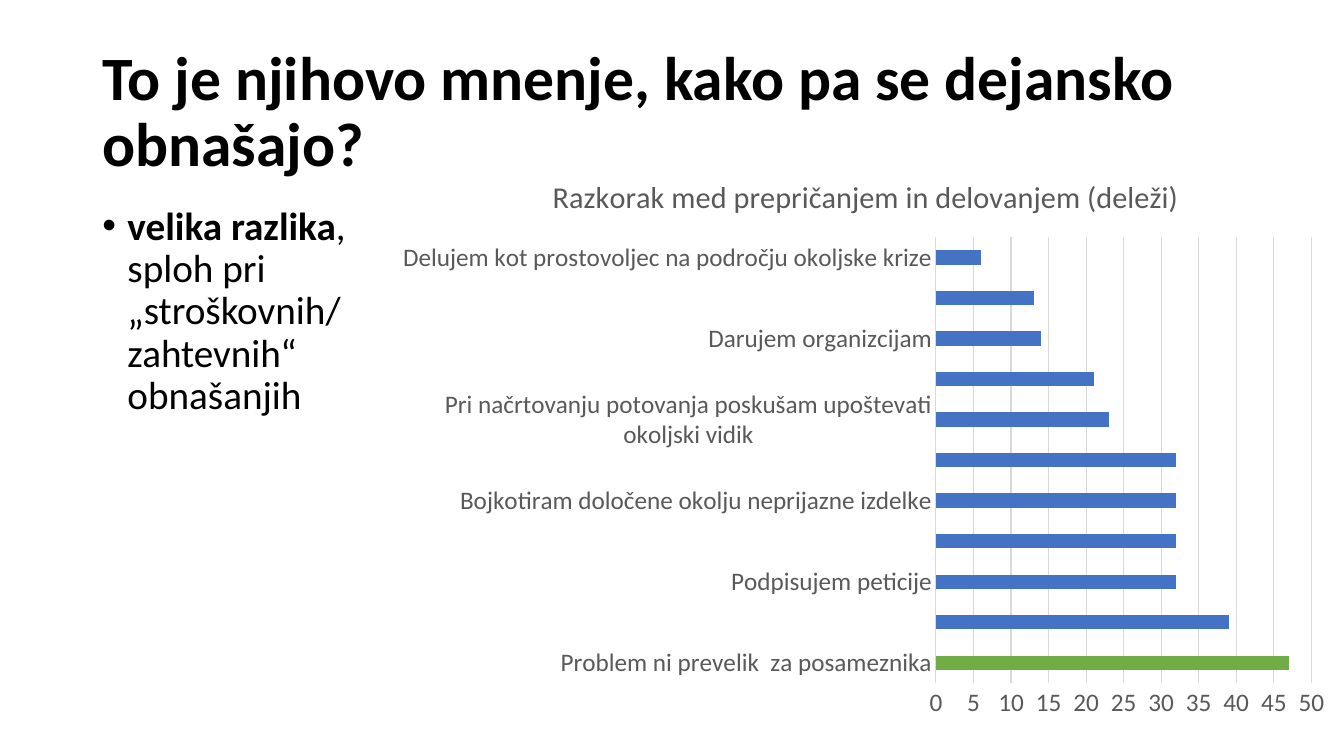
from dataclasses import dataclass

from lxml.etree import SubElement
from pptx import Presentation
from pptx.chart.data import CategoryChartData
from pptx.dml.color import RGBColor
from pptx.enum.chart import XL_CHART_TYPE, XL_TICK_MARK
from pptx.enum.text import MSO_ANCHOR, MSO_AUTO_SIZE, PP_ALIGN
from pptx.oxml.ns import qn
from pptx.util import Pt

COLORS = {"text": "000000", "label": "595959", "grid": "D9D9D9",
          "bar": "4472C4", "highlight": "70AD47"}
FONT = "Calibri"


@dataclass
class Box:
    left: float
    top: float
    width: float
    height: float

    def points(self) -> tuple:
        return Pt(self.left), Pt(self.top), Pt(self.width), Pt(self.height)


@dataclass
class Behaviour:
    share: int
    label: str = ""
    color: str = "bar"


# Every second bar is labelled, from the bottom up
BEHAVIOURS = [
    Behaviour(47, "Problem ni prevelik  za posameznika", "highlight"),
    Behaviour(39),
    Behaviour(32, "Podpisujem peticije"),
    Behaviour(32),
    Behaviour(32, "Bojkotiram določene okolju neprijazne izdelke"),
    Behaviour(32),
    Behaviour(23, "Pri načrtovanju potovanja poskušam upoštevati okoljski vidik"),
    Behaviour(21),
    Behaviour(14, "Darujem organizcijam"),
    Behaviour(13),
    Behaviour(6, "Delujem kot prostovoljec na področju okoljske krize"),
]


def rgb(name: str) -> RGBColor:
    return RGBColor.from_string(COLORS[name])


def set_font(font, size: float, color: str = "text", bold: bool = False) -> None:
    for key, value in {"name": FONT, "size": Pt(size), "bold": bold}.items():
        setattr(font, key, value)
    font.color.rgb = rgb(color)


def set_frame(tf, anchor) -> None:
    settings = {"word_wrap": True, "auto_size": MSO_AUTO_SIZE.NONE,
                "vertical_anchor": anchor,
                "margin_left": Pt(7.2), "margin_right": Pt(7.2),
                "margin_top": Pt(3.6), "margin_bottom": Pt(3.6)}
    for key, value in settings.items():
        setattr(tf, key, value)


def set_layout(parent, index: int, **fractions: float) -> None:
    """Place a chart part by fractions of the chart area."""
    for old in parent.findall(qn("c:layout")):
        parent.remove(old)
    layout = parent.makeelement(qn("c:layout"))
    parent.insert(index, layout)
    manual = SubElement(layout, qn("c:manualLayout"))
    if "w" in fractions:
        SubElement(manual, qn("c:layoutTarget")).set("val", "inner")
    for axis in "xy":
        SubElement(manual, qn(f"c:{axis}Mode")).set("val", "edge")
    for key, value in fractions.items():
        SubElement(manual, qn(f"c:{key}")).set("val", str(value))


def add_title(s, box: Box, text: str) -> None:
    sp = s.shapes.title
    sp.left, sp.top, sp.width, sp.height = box.points()
    set_frame(sp.text_frame, MSO_ANCHOR.MIDDLE)
    p = sp.text_frame.paragraphs[0]
    p.alignment, p.line_spacing = PP_ALIGN.LEFT, 0.9
    r = p.add_run()
    r.text = text
    set_font(r.font, 44, bold=True)


def add_bullet(s, box: Box) -> None:
    tf = s.shapes.add_textbox(*box.points()).text_frame
    set_frame(tf, MSO_ANCHOR.TOP)
    p = tf.paragraphs[0]
    p.line_spacing = 0.9
    pPr = p._p.get_or_add_pPr()
    pPr.set("marL", str(Pt(18)))
    pPr.set("indent", str(-Pt(18)))
    SubElement(pPr, qn("a:buFont")).set("typeface", "Arial")
    SubElement(pPr, qn("a:buChar")).set("char", "•")
    for text, bold, break_before in [("velika razlika", True, False),
                                     (", sploh pri „stroškovnih/", False, False),
                                     ("zahtevnih“ obnašanjih", False, True)]:
        if break_before:
            p.add_line_break()
        r = p.add_run()
        r.text = text
        set_font(r.font, 28, bold=bold)


def add_gap_chart(s, box: Box) -> None:
    data = CategoryChartData()
    data.categories = [b.label for b in BEHAVIOURS]
    data.add_series("Series 1", [b.share for b in BEHAVIOURS])
    chart = s.shapes.add_chart(XL_CHART_TYPE.BAR_CLUSTERED, *box.points(), data).chart
    set_font(chart.font, 18)
    chart.has_legend = False

    # Chart title
    tf = chart.chart_title.text_frame
    tf.text = "Razkorak med prepričanjem in delovanjem (deleži)"
    set_font(tf.paragraphs[0].runs[0].font, 21.6, "label")
    chart.chart_title.include_in_layout = False
    set_layout(chart.chart_title._element, 1, x=0.17, y=0.03)
    set_layout(chart._chartSpace.chart.plotArea, 0, x=0.575, y=0.146, w=0.391, h=0.775)

    # Bars
    plot = chart.plots[0]
    plot.gap_width, plot.vary_by_categories = 182, False
    series = plot.series[0]
    series.format.fill.solid()
    series.format.fill.fore_color.rgb = rgb("bar")
    for i, b in enumerate(BEHAVIOURS):
        if b.color != "bar":
            fill = series.points[i].format.fill
            fill.solid()
            fill.fore_color.rgb = rgb(b.color)

    # Axes
    for axis in (chart.category_axis, chart.value_axis):
        axis.major_tick_mark = axis.minor_tick_mark = XL_TICK_MARK.NONE
        set_font(axis.tick_labels.font, 18, "label")
    value_axis = chart.value_axis
    for key, value in {"minimum_scale": 0, "maximum_scale": 50, "major_unit": 5,
                       "has_major_gridlines": True}.items():
        setattr(value_axis, key, value)
    value_axis.format.line.fill.background()
    for line in (chart.category_axis.format.line, value_axis.major_gridlines.format.line):
        line.color.rgb = rgb("grid")
        line.width = Pt(0.75)


def main() -> None:
    prs = Presentation()
    prs.slide_width, prs.slide_height = Pt(960), Pt(540)
    s = prs.slides.add_slide(prs.slide_layouts[5])
    add_title(s, Box(66, 28.75, 828, 104.4),
              "To je njihovo mnenje, kako pa se dejansko obnašajo?")
    add_bullet(s, Box(66, 143.75, 208, 342.6))
    add_gap_chart(s, Box(274.3, 109.4, 685.7, 411.1))
    prs.save("out.pptx")


if __name__ == "__main__":
    main()
